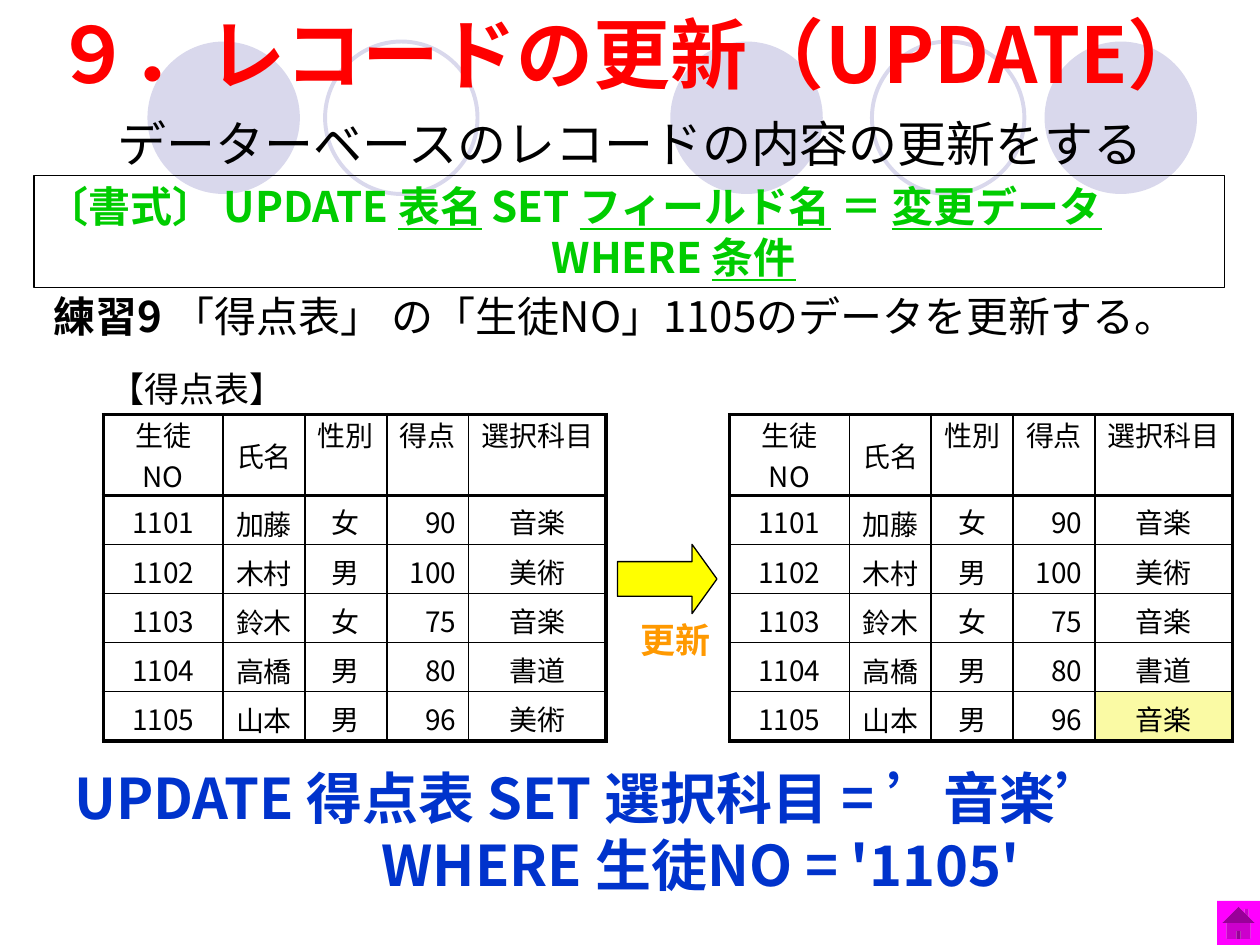
"""Build a slide that explains how UPDATE changes a record."""
from typing import NamedTuple

from lxml import etree
from pptx import Presentation
from pptx import util as u
from pptx.dml import color
from pptx.enum import shapes, text
from pptx.oxml import ns

GOTHIC = "Noto Sans CJK JP"
BLACK, WHITE, LAVENDER = "000000", "FFFFFF", "D9D8EC"
LEFT, CENTER, RIGHT = text.PP_ALIGN.LEFT, text.PP_ALIGN.CENTER, text.PP_ALIGN.RIGHT
SHAPE = shapes.MSO_SHAPE


class Piece(NamedTuple):
    words: str
    underline: bool = False
    bold: bool = False


class Line(NamedTuple):
    pieces: list[Piece]
    indent: float = 0


class Style(NamedTuple):
    size: float
    hue: str = BLACK
    bold: bool = False
    font: str = GOTHIC
    align: text.PP_ALIGN = LEFT


class Box(NamedTuple):
    left: float
    top: float
    width: float
    height: float


class Caption(NamedTuple):
    box: Box
    style: Style
    lines: list[Line]


class Circle(NamedTuple):
    left: float
    filled: bool


CIRCLES = [Circle(5.32, True), Circle(8.29, True), Circle(1.17, True),
           Circle(6.92, False), Circle(2.58, False)]

SYNTAX_BOX = Box(0.27, 1.39, 9.45, 0.89)
SYNTAX_STYLE = Style(24, "00CC00", True)
SYNTAX = [
    Line([Piece("〔書式〕 UPDATE "), Piece("表名", True), Piece(" SET "),
          Piece("フィールド名", True), Piece(" ＝ "), Piece("変更データ", True)]),
    Line([Piece("WHERE "), Piece("条件", True)], 4.01),
]

CAPTIONS = [
    Caption(Box(0, 0.9, 10, 0.47), Style(28, font="Arial", align=CENTER),
            [Line([Piece("データーベースのレコードの内容の更新をする")])]),
    Caption(Box(0, 2.27, 10, 0.47), Style(24),
            [Line([Piece("練習9 ", bold=True),
                   Piece("「得点表」 の「生徒NO」1105のデータを更新する。")], 0.33)]),
    Caption(Box(0, 0, 10, 0.83), Style(44, "FF0000", True, align=CENTER),
            [Line([Piece("９．レコードの更新（UPDATE）")])]),
    Caption(Box(0.77, 2.89, 1.97, 0.39), Style(20, font="Arial"),
            [Line([Piece("【得点表】")])]),
    Caption(Box(0, 5.82, 10, 1.54), Style(32, "0033CC", True),
            [Line([Piece("UPDATE 得点表 SET 選択科目 = ’音楽’")], 0.49),
             Line([Piece("WHERE 生徒NO = '1105'")], 2.93)]),
    Caption(Box(4.85, 4.86, 1.02, 0.43), Style(20, "FF9900", True, "Arial", CENTER),
            [Line([Piece("更新")])]),
]

HEADER = ["生徒NO", "氏名", "性別", "得点", "選択科目"]
STUDENTS = [
    ["1101", "加藤", "女", "90", "音楽"],
    ["1102", "木村", "男", "100", "美術"],
    ["1103", "鈴木", "女", "75", "音楽"],
    ["1104", "高橋", "男", "80", "書道"],
    ["1105", "山本", "男", "96", "美術"],
]
UPDATED = STUDENTS[:-1] + [STUDENTS[-1][:-1] + ["音楽"]]
COLUMN_WIDTHS = [0.95, 0.65, 0.65, 0.65, 1.09]
ROW_HEIGHT = 0.39
NAME_COLUMN, SCORE_COLUMN = 1, 3


def rgb(value: str) -> color.RGBColor:
    """Turn a hex string into a colour."""
    return color.RGBColor.from_string(value)


def place(box: Box) -> list[u.Length]:
    """Give the box as lengths."""
    return [u.Inches(side) for side in box]


def format_run(run, style: Style, piece: Piece) -> None:
    """Apply the style and the piece's own emphasis to a run."""
    run.font.size = u.Pt(style.size)
    run.font.bold = style.bold or piece.bold
    run.font.underline = piece.underline
    run.font.color.rgb = rgb(style.hue)
    run.font.name = style.font
    east_asian = etree.SubElement(run.font._element, ns.qn("a:ea"))
    east_asian.set("typeface", GOTHIC)


def write(frame, lines: list[Line], style: Style) -> None:
    """Fill a text frame with formatted lines."""
    frame.word_wrap = True
    frame.vertical_anchor = text.MSO_ANCHOR.MIDDLE
    for index, line in enumerate(lines):
        paragraph = frame.add_paragraph() if index else frame.paragraphs[0]
        paragraph.alignment = style.align
        if line.indent:
            properties = paragraph._p.get_or_add_pPr()
            properties.set("marL", str(u.Inches(line.indent)))
            properties.set("indent", "0")
        for piece in line.pieces:
            run = paragraph.add_run()
            run.text = piece.words
            format_run(run, style, piece)


def add_figure(slide, preset: shapes.MSO_SHAPE, box: Box, fill: str = "",
               outline: str = "", weight: float = 0.75):
    """Draw a preset shape with an optional fill and outline."""
    figure = slide.shapes.add_shape(preset, *place(box))
    figure.shadow.inherit = False
    if fill:
        figure.fill.solid()
        figure.fill.fore_color.rgb = rgb(fill)
    else:
        figure.fill.background()
    if outline:
        figure.line.color.rgb = rgb(outline)
        figure.line.width = u.Pt(weight)
    else:
        figure.line.fill.background()
    return figure


def add_border(cell, side: str, weight: float) -> None:
    """Rule one side of a table cell."""
    rule = etree.SubElement(cell._tc.get_or_add_tcPr(), ns.qn(f"a:ln{side}"))
    rule.set("w", str(u.Pt(weight)))
    paint = etree.SubElement(rule, ns.qn("a:solidFill"))
    etree.SubElement(paint, ns.qn("a:srgbClr")).set("val", BLACK)


def add_score_table(slide, left: float, students: list[list[str]],
                    changed: tuple[int, int] | None = None) -> None:
    """Draw the score table and highlight the changed cell."""
    rows = [HEADER] + students
    last_row, last_column = len(rows) - 1, len(HEADER) - 1
    box = Box(left, 3.29, sum(COLUMN_WIDTHS), ROW_HEIGHT * len(rows))
    scores = slide.shapes.add_table(len(rows), len(HEADER), *place(box)).table
    scores.first_row = scores.horz_banding = False
    for column, width in zip(scores.columns, COLUMN_WIDTHS):
        column.width = u.Inches(width)
    for r, row in enumerate(rows):
        scores.rows[r].height = u.Inches(ROW_HEIGHT)
        for c, words in enumerate(row):
            cell = scores.cell(r, c)
            cell.margin_top = u.Inches(0.05 if r else 0)
            cell.margin_bottom = 0
            thick = {"L": c == 0, "R": c == last_column,
                     "T": r <= 1, "B": r in (0, last_row)}
            for side, heavy in thick.items():
                add_border(cell, side, 2.25 if heavy else 1)
            cell.fill.solid()
            cell.fill.fore_color.rgb = rgb("FAFAA4" if (r, c) == changed else WHITE)
            align = RIGHT if r and c == SCORE_COLUMN else CENTER
            write(cell.text_frame, [Line([Piece(words)])], Style(16, align=align))
            cell.vertical_anchor = (text.MSO_ANCHOR.MIDDLE if c == NAME_COLUMN
                                    else text.MSO_ANCHOR.TOP)


def main() -> None:
    """Compose and save the slide."""
    deck = Presentation()
    deck.slide_width, deck.slide_height = u.Inches(10), u.Inches(7.5)
    slide = deck.slides.add_slide(deck.slide_layouts[6])
    for circle in CIRCLES:
        add_figure(slide, SHAPE.OVAL, Box(circle.left, 0.33, 1.21, 1.21),
                   fill=LAVENDER if circle.filled else "",
                   outline="" if circle.filled else LAVENDER, weight=2.25)
    syntax = add_figure(slide, SHAPE.RECTANGLE, SYNTAX_BOX, outline=BLACK)
    write(syntax.text_frame, SYNTAX, SYNTAX_STYLE)
    add_score_table(slide, 0.82, STUDENTS)
    add_score_table(slide, 5.79, UPDATED, changed=(len(UPDATED), len(HEADER) - 1))
    arrow = add_figure(slide, SHAPE.RIGHT_ARROW, Box(4.9, 4.32, 0.79, 0.55),
                       "FFFF00", BLACK)
    arrow.adjustments[1] = 0.36
    for caption in CAPTIONS:
        label = slide.shapes.add_textbox(*place(caption.box))
        write(label.text_frame, caption.lines, caption.style)
    add_figure(slide, SHAPE.ACTION_BUTTON_HOME, Box(9.66, 7.15, 0.34, 0.35), "FF00FF")
    deck.save("out.pptx")


if __name__ == "__main__":
    main()
